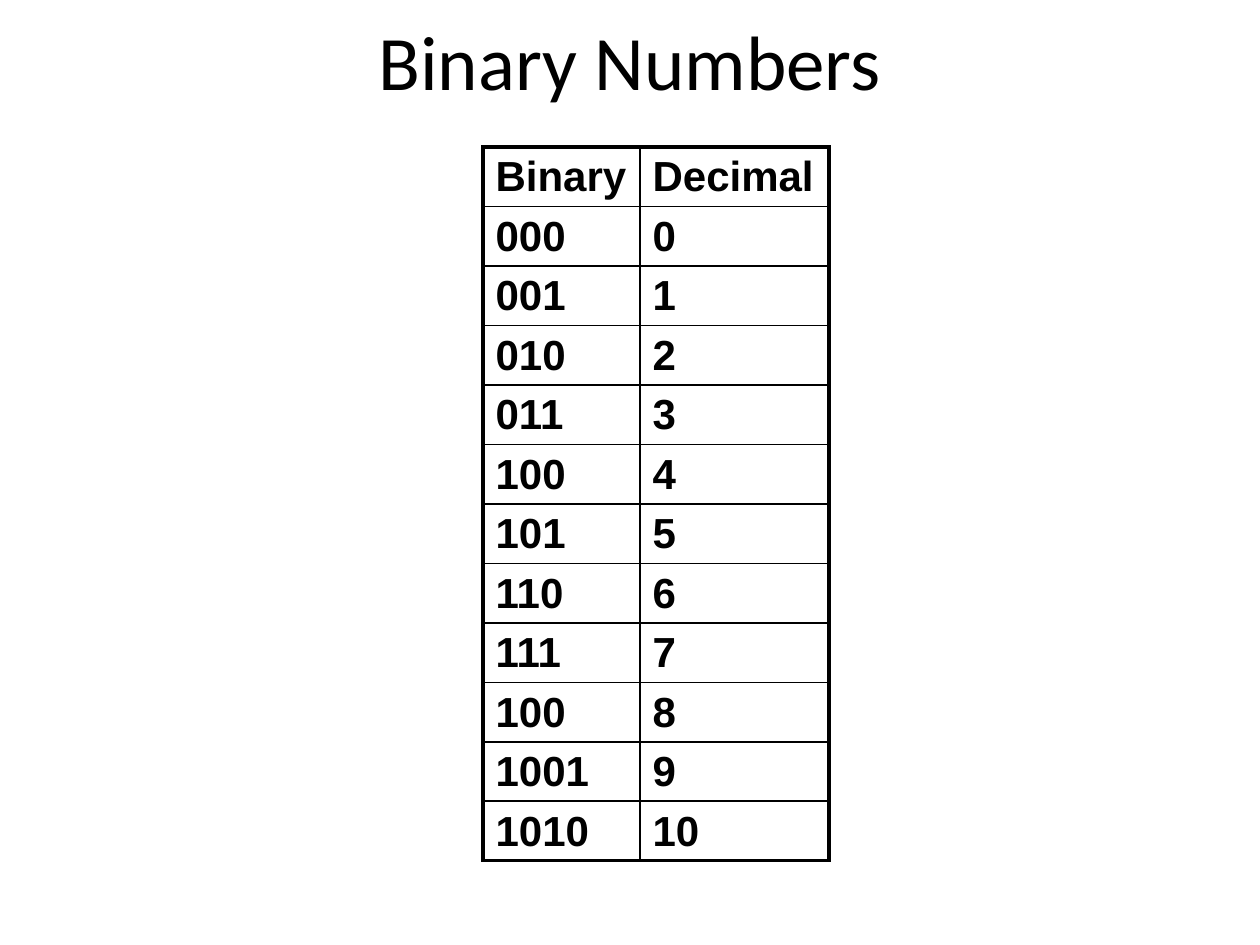
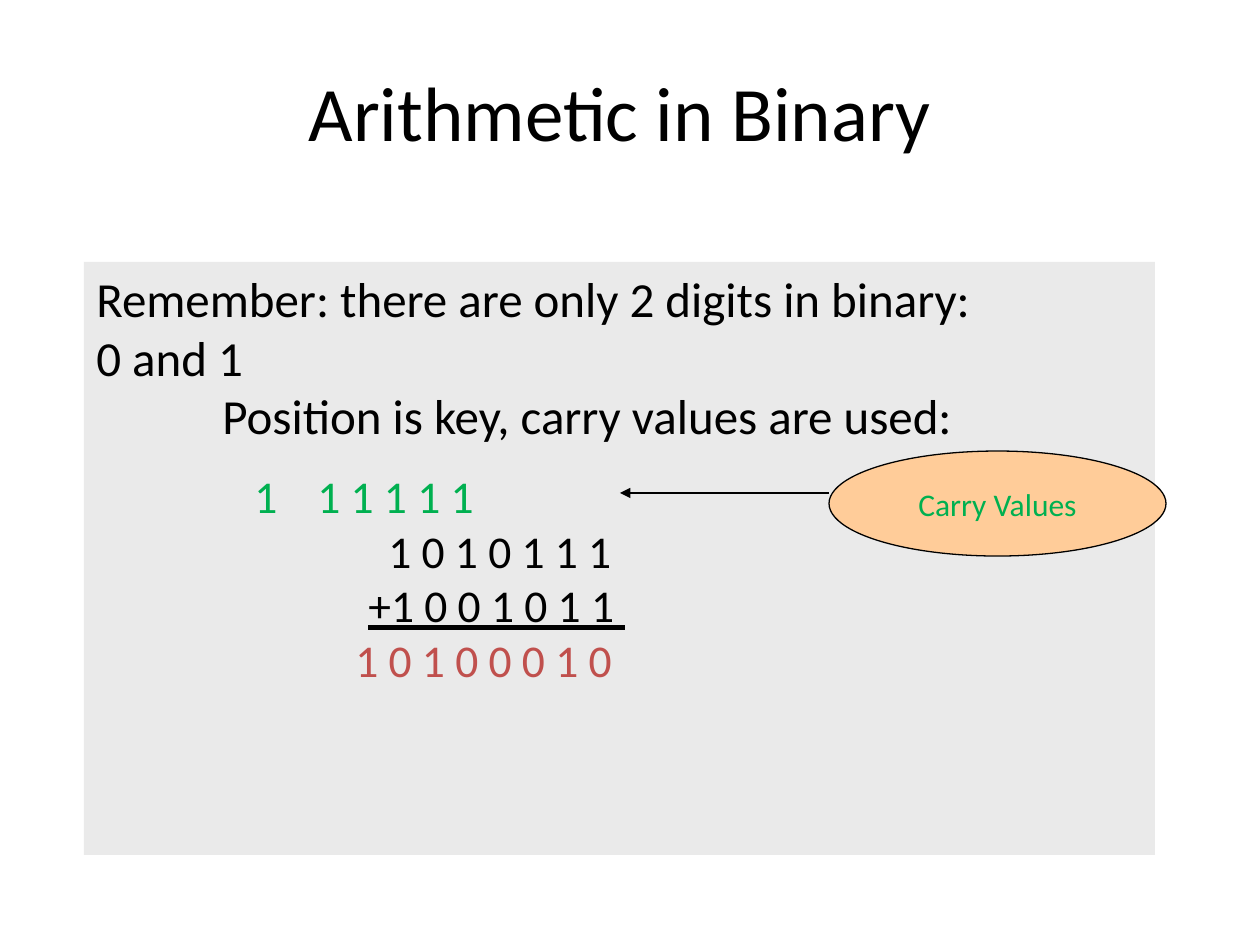
"""Build two slides on binary numbers and binary addition."""
import pptx
import pptx.dml.color
import pptx.enum.shapes
import pptx.enum.text
import pptx.oxml
import pptx.oxml.ns
import pptx.util

EMU_PER_PX = 914400 / 126
SLIDE_SIZE = (1260, 945)
TITLE_ONLY = 5
COLOURS = {
    "ink": "000000",
    "panel": "EAEAEA",
    "bubble": "FFCC99",
    "carry": "00B050",
    "sum": "C0504D",
}
TITLE = {"name": "Calibri", "size": pptx.util.Pt(44)}
BODY = {"name": "Calibri", "size": pptx.util.Pt(28)}
DIGITS = {"name": "Calibri", "size": pptx.util.Pt(26)}
LABEL = {"name": "Calibri", "size": pptx.util.Pt(18)}
CELL = {"name": "Arial", "size": pptx.util.Pt(24), "bold": True}
THIN, THICK = 1, 2.25

BINARY_ROWS = [
    ("Binary", "Decimal"), ("000", "0"), ("001", "1"), ("010", "2"),
    ("011", "3"), ("100", "4"), ("101", "5"), ("110", "6"),
    ("111", "7"), ("100", "8"), ("1001", "9"), ("1010", "10"),
]


def px(length):
    return pptx.util.Emu(round(length * EMU_PER_PX))


def colour(name):
    return pptx.dml.color.RGBColor.from_string(COLOURS[name])


def set_attributes(target, values):
    for name, value in values.items():
        setattr(target, name, value)


def paint(fill, name):
    fill.solid()
    fill.fore_color.rgb = colour(name)


def format_font(font, style, ink="ink"):
    set_attributes(font, style)
    font.color.rgb = colour(ink)


def append_xml(parent, xml):
    namespaces = pptx.oxml.ns.nsdecls("a")
    parent.append(pptx.oxml.parse_xml(xml.replace(" NS", " " + namespaces, 1)))


def add_titled_slide(presentation, text, box):
    slide = presentation.slides.add_slide(presentation.slide_layouts[TITLE_ONLY])
    title = slide.shapes.title
    set_attributes(title, dict(zip(("left", "top", "width", "height"), map(px, box))))
    title.text_frame.text = text
    format_font(title.text_frame.paragraphs[0].runs[0].font, TITLE)
    return slide


def set_borders(cell, widths):
    for side, width in widths.items():
        append_xml(
            cell._tc.get_or_add_tcPr(),
            f'<a:ln{side} NS w="{pptx.util.Pt(width)}"><a:solidFill>'
            f'<a:srgbClr val="{COLOURS["ink"]}"/></a:solidFill></a:ln{side}>',
        )


def add_grid(slide, rows, box, column_widths):
    last_row, last_column = len(rows) - 1, len(column_widths) - 1
    table = slide.shapes.add_table(len(rows), len(column_widths), *map(px, box)).table
    set_attributes(table, {"first_row": False, "horz_banding": False})
    for column, width in zip(table.columns, column_widths):
        column.width = px(width)
    for row_index, row in enumerate(rows):
        for column_index, text in enumerate(row):
            cell = table.cell(row_index, column_index)
            set_attributes(cell, {"text": text, "margin_top": px(7), "margin_bottom": px(3)})
            format_font(cell.text_frame.paragraphs[0].runs[0].font, CELL)
            set_borders(cell, {
                "L": THICK if column_index == 0 else THIN,
                "R": THICK if column_index == last_column else THIN,
                "T": THICK if row_index == 0 else THIN,
                "B": THICK if row_index == last_row else THIN,
            })
            cell.fill.background()


def add_panel(slide, box):
    panel = slide.shapes.add_textbox(*map(px, box))
    paint(panel.fill, "panel")
    panel.text_frame.word_wrap = True
    return panel.text_frame


def add_line(frame, text, style, ink="ink", indent=0, stops=()):
    paragraph = frame.paragraphs[0]
    if paragraph.runs:
        paragraph = frame.add_paragraph()
    run = paragraph.add_run()
    run.text = text
    format_font(run.font, style, ink)
    properties = paragraph._p.get_or_add_pPr()
    properties.set("marL", str(px(indent)))
    properties.set("indent", "0")
    if stops:
        tabs = "".join(f'<a:tab pos="{px(stop)}" algn="l"/>' for stop in stops)
        append_xml(properties, f"<a:tabLst NS>{tabs}</a:tabLst>")


def add_bubble(slide, text, box):
    bubble = slide.shapes.add_shape(pptx.enum.shapes.MSO_SHAPE.OVAL, *map(px, box))
    bubble.shadow.inherit = False
    paint(bubble.fill, "bubble")
    bubble.line.color.rgb = colour("ink")
    bubble.line.width = pptx.util.Pt(0.75)
    frame = bubble.text_frame
    set_attributes(frame, {
        "text": text,
        "word_wrap": False,
        "vertical_anchor": pptx.enum.text.MSO_ANCHOR.MIDDLE,
    })
    frame.paragraphs[0].alignment = pptx.enum.text.PP_ALIGN.CENTER
    format_font(frame.paragraphs[0].runs[0].font, LABEL, "carry")


def add_arrow(slide, start, end):
    arrow = slide.shapes.add_connector(
        pptx.enum.shapes.MSO_CONNECTOR.STRAIGHT, *map(px, start + end))
    arrow.line.color.rgb = colour("ink")
    arrow.line.width = pptx.util.Pt(0.75)
    append_xml(arrow.line._get_or_add_ln(), '<a:tailEnd NS type="triangle"/>')
    append_xml(arrow._element.spPr, "<a:effectLst NS/>")


def build_numbers_slide(presentation):
    slide = add_titled_slide(presentation, "Binary Numbers", (63, 0, 1134, 120))
    add_grid(slide, BINARY_ROWS, (483, 147, 346, 714), (157, 189))


def build_arithmetic_slide(presentation):
    slide = add_titled_slide(presentation, "Arithmetic in Binary", (53, 32, 1134, 157))
    reminder = add_panel(slide, (84, 262, 1071, 593))
    add_line(reminder, "Remember: there are only 2 digits in binary:", BODY)
    add_line(reminder, "0 and 1", BODY)
    add_line(reminder, "Position is key, carry values are used:", BODY, indent=126)
    add_bubble(slide, "Carry Values", (829, 451, 337, 105))
    addition = add_panel(slide, (179, 462, 609, 233))
    add_line(addition, "\t1\t1 1 1 1 1", DIGITS, "carry", stops=(178, 232))
    add_line(addition, "1 0 1 0 1 1 1", DIGITS, indent=197)
    add_line(addition, "+1 0 0 1 0 1 1 ", {**DIGITS, "underline": True}, indent=177)
    add_line(addition, "1 0 1 0 0 0 1 0", DIGITS, "sum", indent=164)
    add_arrow(slide, (829, 493), (620, 493))


def main():
    presentation = pptx.Presentation()
    presentation.slide_width, presentation.slide_height = map(px, SLIDE_SIZE)
    build_numbers_slide(presentation)
    build_arithmetic_slide(presentation)
    presentation.save("out.pptx")


if __name__ == "__main__":
    main()
